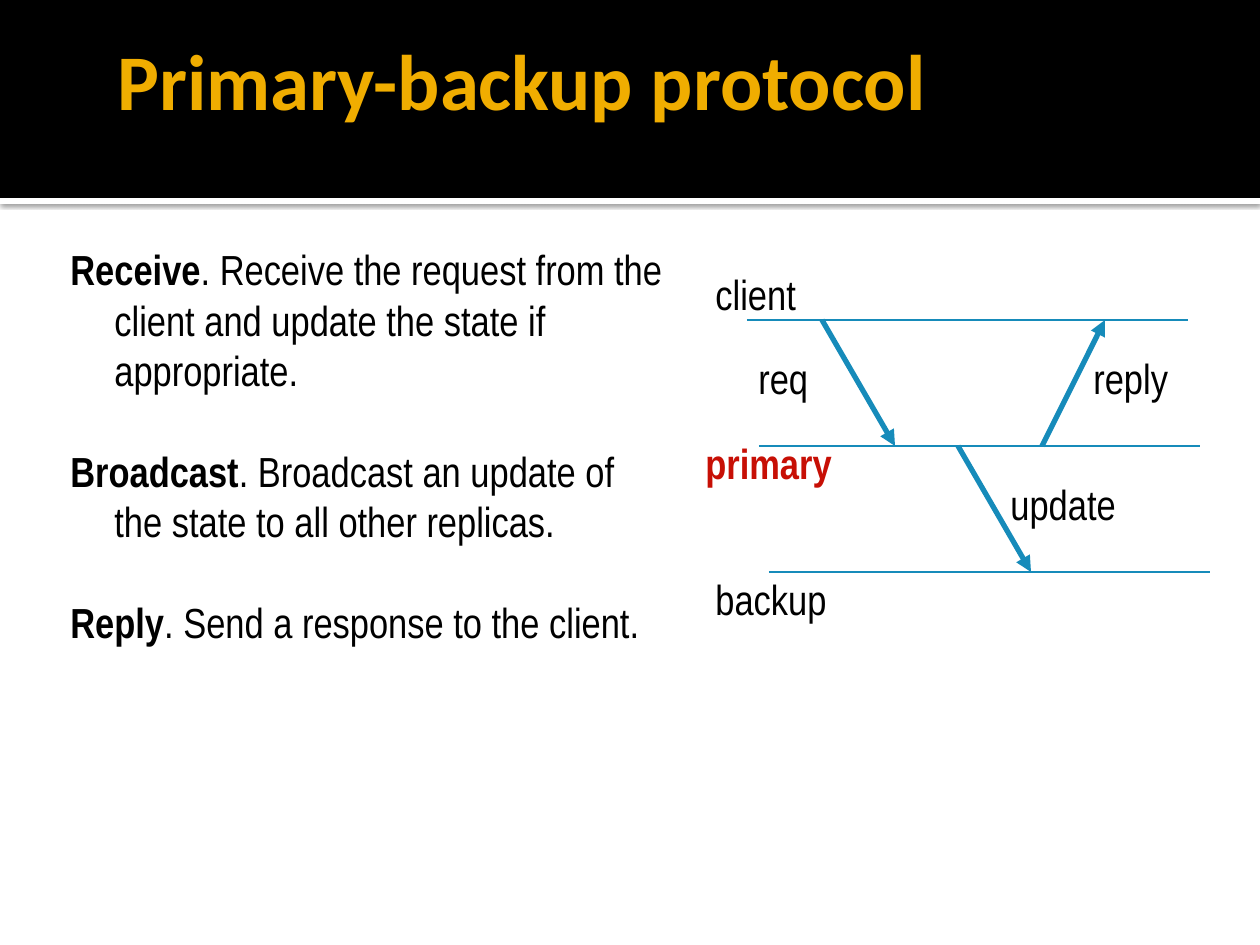
import pptx
import pptx.util
import pptx.oxml
import pptx.oxml.ns
import pptx.dml.color
import pptx.enum.shapes
import pptx.enum.text

RGB = pptx.dml.color.RGBColor
BLACK = RGB(0x00, 0x00, 0x00)
WHITE = RGB(0xFF, 0xFF, 0xFF)
GOLD = RGB(0xF0, 0xAD, 0x00)
BLUE = RGB(0x16, 0x8B, 0xBA)
RED = RGB(0xC7, 0x0F, 0x05)
ANCHOR = pptx.enum.text.MSO_ANCHOR
FIT = pptx.enum.text.MSO_AUTO_SIZE
NS = pptx.oxml.ns.nsdecls("a")
SHADE = (
    f'<a:effectLst {NS}><a:outerShdw blurRad="31750" dist="10160" dir="5400000">'
    '<a:srgbClr val="000000"><a:alpha val="60000"/></a:srgbClr>'
    "</a:outerShdw></a:effectLst>"
)


def px(*vals):
    """Turn whole pixels into EMU."""
    return [pptx.util.Emu(round(val * 914400 / 126)) for val in vals]


def put(item, form):
    """Set each format value on the item."""
    for key, val in form.items():
        setattr(item, key, val)


class Deck:
    """Holds the style and the current slide."""

    head = {"name": "Calibri", "size": pptx.util.Pt(45), "bold": True}
    base = {"name": "Arial Narrow", "size": pptx.util.Pt(24), "bold": False}

    def __init__(self):
        """Open a deck with one blank slide."""
        self.show = pptx.Presentation()
        self.show.slide_width, self.show.slide_height = px(1260, 945)
        self.slide = self.show.slides.add_slide(self.show.slide_layouts[6])

    def band(self, box, fill, shade=False):
        """Add a plain rectangle."""
        kind = pptx.enum.shapes.MSO_SHAPE.RECTANGLE
        rect = self.slide.shapes.add_shape(kind, *px(*box))
        rect.fill.solid()
        rect.fill.fore_color.rgb = fill
        rect.line.fill.background()
        if shade:
            rect._element.spPr.append(pptx.oxml.parse_xml(SHADE))
        else:
            rect.shadow.inherit = False

    def text(self, box, paras, font, tint=BLACK, form=None, hang=None):
        """Add a text box of paragraphs, each a list of text and bold pairs."""
        frame = self.slide.shapes.add_textbox(*px(*box)).text_frame
        put(frame, form or {})
        for num, runs in enumerate(paras):
            para = frame.add_paragraph() if num else frame.paragraphs[0]
            if hang:
                left, first, gap = hang
                props = para._p.get_or_add_pPr()
                props.set("marL", str(px(left)[0]))
                props.set("indent", str(px(first)[0]))
                if num:
                    para.space_before = pptx.util.Pt(gap)
            for words, bold in runs:
                run = para.add_run()
                run.text = words
                put(run.font, {**font, "bold": bold})
                run.font.color.rgb = tint

    def label(self, left, top, wide, words, tint=BLACK, bold=False):
        """Add a one-line label."""
        form = {"word_wrap": False, "auto_size": FIT.SHAPE_TO_FIT_TEXT}
        self.text((left, top, wide, 63), [[(words, bold)]], self.base, tint, form)

    def line(self, ends, width, arrow=False):
        """Add a straight line, with an arrowhead at its end if asked."""
        kind = pptx.enum.shapes.MSO_CONNECTOR.STRAIGHT
        link = self.slide.shapes.add_connector(kind, *px(*ends))
        link.line.color.rgb = BLUE
        link.line.width = pptx.util.Pt(width)
        if arrow:
            tip = pptx.oxml.parse_xml(f'<a:tailEnd {NS} type="triangle"/>')
            link._element.spPr.find(pptx.oxml.ns.qn("a:ln")).append(tip)
        link._element.spPr.append(pptx.oxml.parse_xml(f"<a:effectLst {NS}/>"))


def main():
    """Build and save the slide."""
    deck = Deck()
    deck.band((0, 198, 1260, 6), WHITE, shade=True)
    deck.band((0, 0, 1260, 198), BLACK)
    form = {"word_wrap": True, "vertical_anchor": ANCHOR.MIDDLE, "margin_right": px(6)[0]}
    deck.text((105, 0, 1071, 158), [[("Primary-backup protocol", True)]], deck.head, GOLD, form)

    steps = {
        "Receive": "Receive the request from the client and update the state if appropriate.",
        "Broadcast": "Broadcast an update of the state to all other replicas.",
        "Reply": "Send a response to the client.",
    }
    paras = [[(name, True), (f". {words}", False)] for name, words in steps.items()]
    form = {"word_wrap": True, "margin_top": px(13)[0]}
    deck.text((42, 231, 640, 567), paras, deck.base, form=form, hang=(60, -44, 28.8))

    client, prime, backup = rows = [320, 446, 572]
    for left, row in zip((747, 759, 769), rows):
        deck.line((left, row, left + 441, row), 0.75)
    for ends in (
        (822, client, 895, prime),
        (958, prime, 1031, backup),
        (1042, prime, 1105, client),
    ):
        deck.line(ends, 3, arrow=True)

    deck.label(746, 346, 76, "req")
    deck.label(1081, 346, 101, "reply")
    deck.label(998, 472, 132, "update")
    deck.label(703, 262, 107, "client")
    deck.label(693, 431, 156, "primary", RED, True)
    deck.label(703, 567, 138, "backup")
    deck.show.save("out.pptx")


if __name__ == "__main__":
    main()
